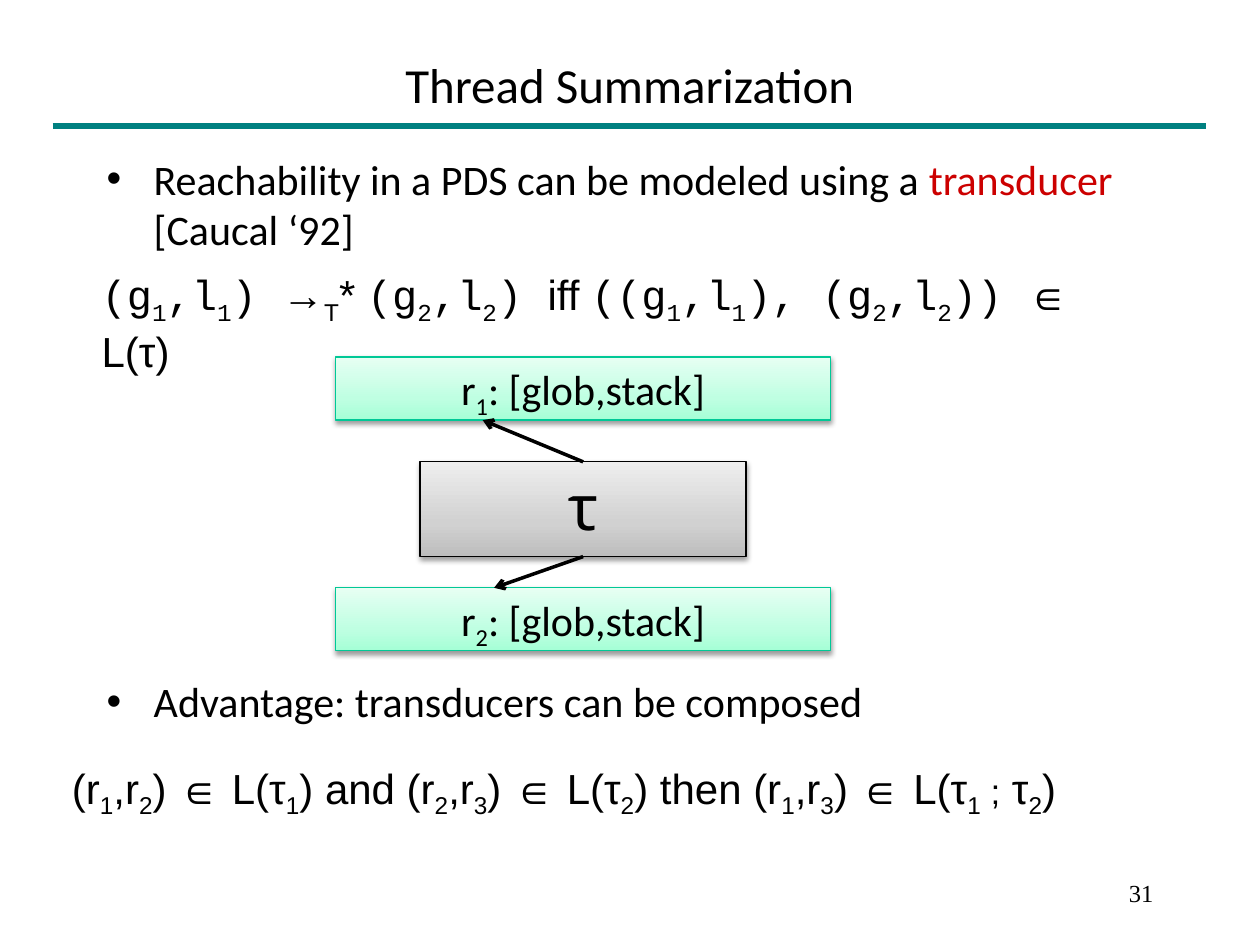
from copy import deepcopy

from pptx import Presentation
from pptx.dml.color import RGBColor
from pptx.enum.shapes import MSO_CONNECTOR as Connector, MSO_SHAPE as Shape
from pptx.enum.text import MSO_ANCHOR as Anchor, PP_ALIGN as Align
from pptx.oxml import parse_xml
from pptx.oxml.ns import nsdecls, qn
from pptx.util import Cm, Pt

COLORS = {
    "text": "000000",
    "accent": "CC0000",
    "rule": "008080",
    "mint_line": "00C896",
}
MINT = ("A5FFD6", "BFFFE2", "E7FFF3")
GRAY = ("BDBDBD", "D1D1D1", "EEEEEE")
STOPS = (0, 0.35, 1)
SANS, MONO, BODY = "Arial", "Courier New", "Calibri"


def rgb(name):
    return RGBColor.from_string(COLORS.get(name, name))


class SlideBuilder:
    def __init__(self, page):
        self.page = page

    def add_spans(self, para, spans, size=24, font=BODY, align=Align.LEFT):
        """Add spans of (text, overrides); an underscore lowers the next character."""
        para.alignment = align
        for text, style in spans:
            head, *tails = text.split("_")
            pieces = [(head, False)]
            for tail in tails:
                pieces += [(tail[0], True), (tail[1:], False)]
            for piece, lowered in pieces:
                if not piece:
                    continue
                span = para.add_run()
                span.text = piece
                span.font.size = Pt(style.get("size", size))
                span.font.name = style.get("font", font)
                span.font.color.rgb = rgb(style.get("color", "text"))
                if lowered:
                    span.font._element.set("baseline", "-25000")

    def title(self, text, left, top, width, height):
        box = self.page.shapes.title
        box.left, box.top, box.width, box.height = map(Cm, (left, top, width, height))
        frame = box.text_frame
        frame.vertical_anchor = Anchor.MIDDLE
        self.add_spans(frame.paragraphs[0], [(text, {})], size=28, align=Align.CENTER)

    def text(self, spans, left, top, width, height, wrap=True, **style):
        box = self.page.shapes.add_textbox(*map(Cm, (left, top, width, height)))
        box.text_frame.word_wrap = wrap
        para = box.text_frame.paragraphs[0]
        self.add_spans(para, spans, **style)
        return para

    def bullet(self, spans, left, top, width, height):
        para = self.text(spans, left, top, width, height)
        props = para._p.get_or_add_pPr()
        props.set("marL", str(Cm(0.95)))
        props.set("indent", str(-Cm(0.95)))
        props.append(parse_xml(f'<a:buFont {nsdecls("a")} typeface="Arial"/>'))
        props.append(parse_xml(f'<a:buChar {nsdecls("a")} char="•"/>'))

    def block(self, text, left, top, width, height, shades, line, **style):
        box = self.page.shapes.add_shape(
            Shape.RECTANGLE, *map(Cm, (left, top, width, height)))
        box.fill.gradient()
        box.fill.gradient_angle = 90
        stop_list = box._element.spPr.find(qn("a:gradFill")).find(qn("a:gsLst"))
        stop_list.insert(1, deepcopy(stop_list[0]))
        for stop, position, shade in zip(box.fill.gradient_stops, STOPS, shades):
            stop.position = position
            stop.color.rgb = rgb(shade)
        box.line.color.rgb = rgb(line)
        box.line.width = Pt(0.75)
        box.shadow.inherit = False
        box._element.spPr.find(qn("a:effectLst")).append(parse_xml(
            f'<a:outerShdw {nsdecls("a")} blurRad="{Pt(3.1)}" dist="{Pt(1.6)}" '
            'dir="5400000" rotWithShape="0"><a:srgbClr val="000000">'
            '<a:alpha val="38000"/></a:srgbClr></a:outerShdw>'))
        box.text_frame.vertical_anchor = Anchor.TOP
        self.add_spans(box.text_frame.paragraphs[0], [(text, {})],
                       align=Align.CENTER, **style)
        return box

    def line(self, start, end, color="text", width=2):
        link = self.page.shapes.add_connector(
            Connector.STRAIGHT, *map(Cm, (*start, *end)))
        link.line.color.rgb = rgb(color)
        link.line.width = Pt(width)
        link._element.spPr.append(parse_xml(f'<a:effectLst {nsdecls("a")}/>'))
        return link

    def arrow(self, box, side, start, end):
        link = self.line(start, end)
        link.begin_connect(box, side)
        link._element.spPr.find(qn("a:ln")).append(
            parse_xml(f'<a:tailEnd {nsdecls("a")} type="arrow"/>'))


def main():
    deck = Presentation()
    deck.slide_width, deck.slide_height = Cm(25.4), Cm(19.05)
    slide = SlideBuilder(deck.slides.add_slide(deck.slide_layouts[5]))

    slide.line((1.06, 2.54), (24.31, 2.54), color="rule", width=4)
    slide.title("Thread Summarization", 1.9, 0.85, 21.59, 1.69)
    slide.bullet([("Reachability in a PDS can be modeled using a ", {}),
                  ("transducer ", {"color": "accent"}),
                  ("[Caucal ‘92]", {})], 1.9, 2.96, 21.59, 2.2)
    slide.bullet([("Advantage: transducers can be composed", {})],
                 1.9, 13.5, 21.59, 1.27)

    sans = {"font": SANS}
    slide.text([("(g_1,l_1) ", {}), ("→_T* ", sans), ("(g_2,l_2) ", {}),
                ("iff ", sans), ("((g_1,l_1), (g_2,l_2)) ", {}),
                ("∈ L(τ)", sans)], 1.8, 5.29, 20.42, 1.27, font=MONO)
    slide.text([("(r_1,r_2) ∈ L(τ_1) and (r_2,r_3) ∈ L(τ_2) then "
                 "(r_1,r_3) ∈ L(τ_1", {}), (" ;", {"size": 20}), (" τ_2)", {})],
               1.2, 15.24, 20.4, 1.27, wrap=False, font=SANS)
    slide.text([("31", {})], 18.2, 17.57, 5.3, 1.06,
               size=14, font="Times New Roman", align=Align.RIGHT)

    for number, top in ((1, 7.2), (2, 11.85)):
        slide.block(f"r_{number}: [glob,stack]", 6.77, top, 9.97, 1.27,
                    MINT, "mint_line")
    transducer = slide.block("τ", 8.47, 9.31, 6.57, 1.91, GRAY, "text",
                             size=36, font="Comic Neue")
    slide.arrow(transducer, 0, (11.75, 9.31), (9.73, 8.47))
    slide.arrow(transducer, 2, (11.75, 11.22), (9.96, 11.85))

    deck.save("out.pptx")


if __name__ == "__main__":
    main()
